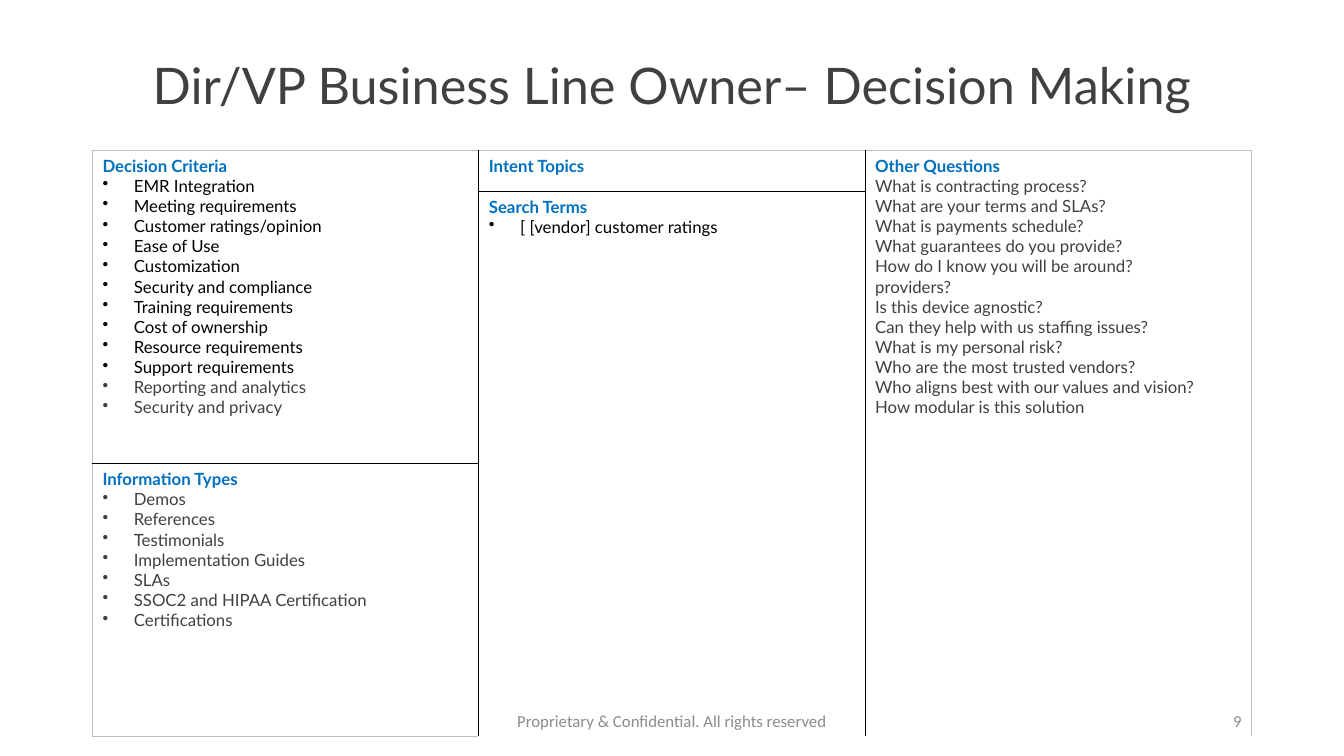
import pptx
import pptx.dml.color
import pptx.enum.text
import pptx.oxml
import pptx.oxml.ns
import pptx.util

Cm = pptx.util.Cm
Pt = pptx.util.Pt
RGBColor = pptx.dml.color.RGBColor
ALIGN = pptx.enum.text.PP_ALIGN

BLUE = RGBColor(0x00, 0x70, 0xC0)
BLACK = RGBColor(0x00, 0x00, 0x00)
DARK_GREY = RGBColor(0x40, 0x40, 0x40)
FOOTER_GREY = RGBColor(0x8C, 0x8C, 0x8C)
FRAME_GREY = RGBColor(0xBF, 0xBF, 0xBF)

TITLE_FORMAT = {"name": "Lato", "size": Pt(36), "bold": False}
HEADING_FORMAT = {"name": "Lato", "size": Pt(12), "bold": True}
BODY_FORMAT = {"name": "Lato", "size": Pt(12), "bold": False}
FOOTER_FORMAT = {"name": "Calibri", "size": Pt(12), "bold": False}

BULLET_INDENT = Cm(0.79)
ROW_HEIGHTS = [Cm(1.04), Cm(6.84), Cm(6.86)]
COLUMN_COUNT = 3

# Each panel: first row, last row, column, heading, bulleted, (colour, lines) groups
PANELS = [
    (0, 1, 0, "Decision Criteria", True, [
        (BLACK, ["EMR Integration", "Meeting requirements", "Customer ratings/opinion",
                 "Ease of Use", "Customization", "Security and compliance",
                 "Training requirements", "Cost of ownership",
                 "Resource requirements", "Support requirements"]),
        (DARK_GREY, ["Reporting and analytics", "Security and privacy"])]),
    (2, 2, 0, "Information Types", True, [
        (DARK_GREY, ["Demos", "References", "Testimonials", "Implementation Guides",
                     "SLAs", "SSOC2 and HIPAA Certification", "Certifications"])]),
    (0, 0, 1, "Intent Topics", False, []),
    (1, 2, 1, "Search Terms", True, [(BLACK, ["[ [vendor] customer ratings"])]),
    (0, 2, 2, "Other Questions", False, [
        (DARK_GREY, ["What is contracting process?", "What are your terms and SLAs?",
                     "What is payments schedule?", "What guarantees do you provide?",
                     "How do I know you will be around?", "providers?",
                     "Is this device agnostic?", "Can they help with us staffing issues?",
                     "What is my personal risk?", "Who are the most trusted vendors?",
                     "Who aligns best with our values and vision?",
                     "How modular is this solution"])]),
]


def format_font(font, values, colour):
    for name, value in values.items():
        setattr(font, name, value)
    font.color.rgb = colour


def add_bullet(paragraph):
    properties = paragraph._p.get_or_add_pPr()
    properties.set("marL", str(BULLET_INDENT))
    properties.set("indent", str(-BULLET_INDENT))
    bullet = pptx.oxml.parse_xml(
        f'<a:buChar {pptx.oxml.ns.nsdecls("a")} char="•"/>')
    properties.append(bullet)


def add_label(slide, box, text, values, colour, alignment, line_spacing=1.0):
    frame = slide.shapes.add_textbox(*box).text_frame
    frame.word_wrap = True
    frame.vertical_anchor = pptx.enum.text.MSO_ANCHOR.MIDDLE
    paragraph = frame.paragraphs[0]
    paragraph.alignment = alignment
    paragraph.line_spacing = line_spacing
    run = paragraph.add_run()
    run.text = text
    format_font(run.font, values, colour)


def fill_panel(cell, heading, bulleted, groups):
    frame = cell.text_frame
    lines = [(heading, HEADING_FORMAT, BLUE, False)]
    lines += [(text, BODY_FORMAT, colour, bulleted)
              for colour, texts in groups for text in texts]
    for index, (text, values, colour, has_bullet) in enumerate(lines):
        paragraph = frame.add_paragraph() if index else frame.paragraphs[0]
        if has_bullet:
            add_bullet(paragraph)
        run = paragraph.add_run()
        run.text = text
        format_font(run.font, values, colour)


def set_borders(cell, borders):
    properties = cell._tc.get_or_add_tcPr()
    for side, colour in borders.items():
        properties.append(pptx.oxml.parse_xml(
            f'<a:ln{side} {pptx.oxml.ns.nsdecls("a")} w="{Pt(1)}"><a:solidFill>'
            f'<a:srgbClr val="{colour}"/></a:solidFill></a:ln{side}>'))
    cell.fill.background()


def add_panels(slide, box):
    row_count = len(ROW_HEIGHTS)
    table = slide.shapes.add_table(row_count, COLUMN_COUNT, *box).table
    table.first_row = False
    table.horz_banding = False
    for column in table.columns:
        column.width = box[2] // COLUMN_COUNT
    for row, height in zip(table.rows, ROW_HEIGHTS):
        row.height = height

    for first, last, column, heading, bulleted, groups in PANELS:
        # Grey on the outer frame, black between panels, none inside a panel
        for row in range(first, last + 1):
            borders = {"L": BLACK if column else FRAME_GREY,
                       "R": BLACK if column < COLUMN_COUNT - 1 else FRAME_GREY}
            if row == first:
                borders["T"] = BLACK if row else FRAME_GREY
            if row == last:
                borders["B"] = BLACK if row < row_count - 1 else FRAME_GREY
            set_borders(table.cell(row, column), borders)
        if last > first:
            table.cell(first, column).merge(table.cell(last, column))
        fill_panel(table.cell(first, column), heading, bulleted, groups)


def add_footer(slide, left, top, width, height):
    middle_width, number_width = Cm(11.43), Cm(7.62)
    middle_left = left + (width - middle_width) // 2
    number_left = left + width - number_width
    add_label(slide, (middle_left, top, middle_width, height),
              "Proprietary & Confidential. All rights reserved",
              FOOTER_FORMAT, FOOTER_GREY, ALIGN.CENTER)
    add_label(slide, (number_left, top, number_width, height),
              "9", FOOTER_FORMAT, FOOTER_GREY, ALIGN.RIGHT)


def main():
    presentation = pptx.Presentation()
    presentation.slide_width = Cm(33.87)
    presentation.slide_height = Cm(19.05)
    slide = presentation.slides.add_slide(presentation.slide_layouts[6])
    left, width = Cm(2.33), Cm(29.21)

    # Title
    add_label(slide, (left, Cm(1.02), width, Cm(2.41)),
              "Dir/VP Business Line Owner– Decision Making",
              TITLE_FORMAT, DARK_GREY, ALIGN.CENTER, 0.9)
    # Panels
    add_panels(slide, (left, Cm(3.79), width, sum(ROW_HEIGHTS)))
    # Footer
    add_footer(slide, left, Cm(17.65), width, Cm(1.02))

    presentation.save("out.pptx")


if __name__ == "__main__":
    main()
